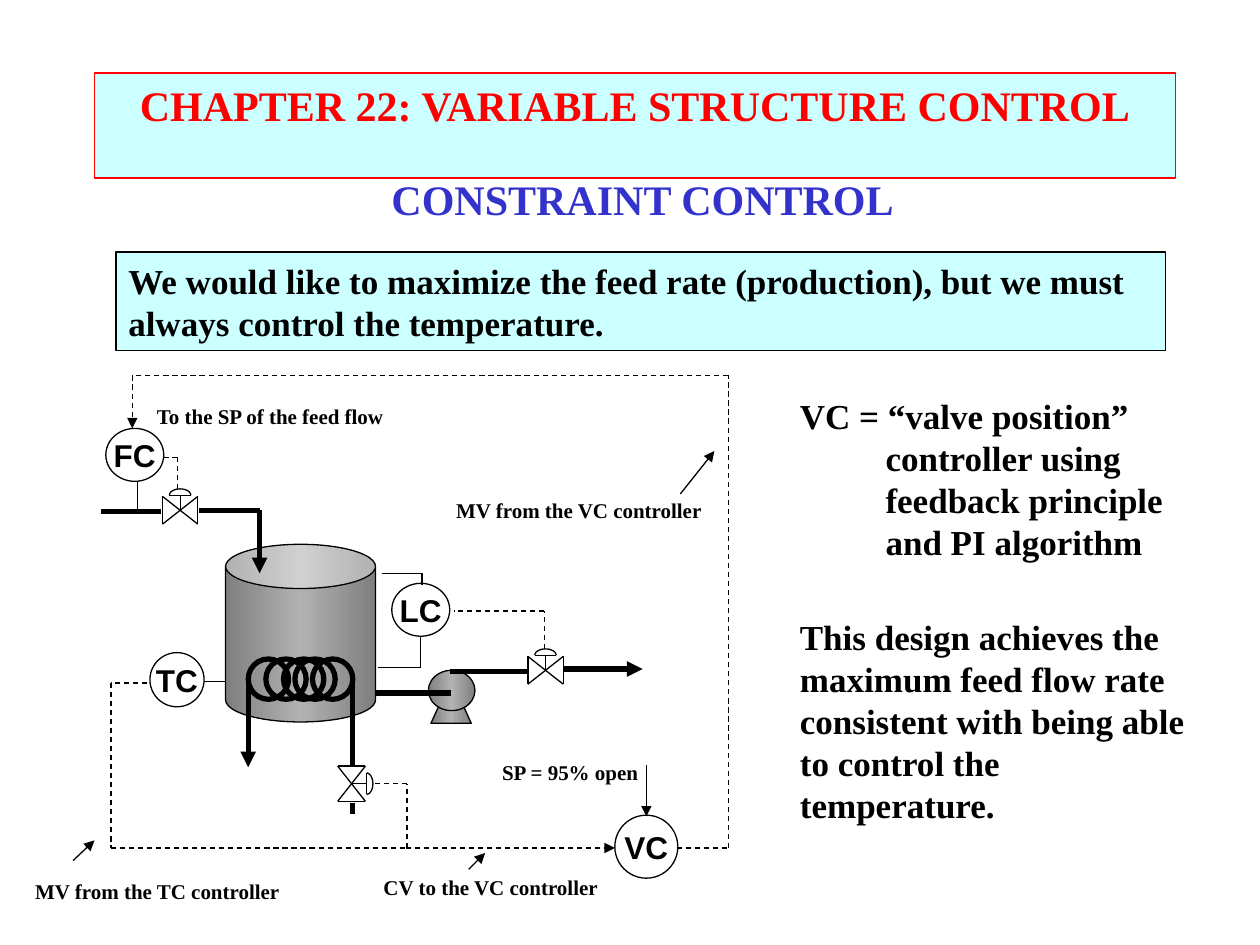
from copy import deepcopy
from itertools import pairwise
from math import cos, pi, sin

from lxml import etree
from pptx import Presentation
from pptx.dml.color import RGBColor
from pptx.enum.dml import MSO_LINE
from pptx.enum.shapes import MSO_CONNECTOR, MSO_SHAPE
from pptx.enum.text import MSO_ANCHOR, MSO_AUTO_SIZE, PP_ALIGN
from pptx.oxml.ns import qn
from pptx.util import Cm, Pt

RECTANGLE, OVAL, CAN = MSO_SHAPE.RECTANGLE, MSO_SHAPE.OVAL, MSO_SHAPE.CAN
RING, PUMP_BASE = MSO_SHAPE.FLOWCHART_CONNECTOR, MSO_SHAPE.FLOWCHART_MANUAL_OPERATION
STRAIGHT, DASH = MSO_CONNECTOR.STRAIGHT, MSO_LINE.DASH
LEFT, CENTER = PP_ALIGN.LEFT, PP_ALIGN.CENTER
TOP, MIDDLE = MSO_ANCHOR.TOP, MSO_ANCHOR.MIDDLE
FIT, FIXED = MSO_AUTO_SIZE.SHAPE_TO_FIT_TEXT, MSO_AUTO_SIZE.NONE

COLORS = {"black": "000000", "red": "FF0000", "blue": "3333CC",
          "panel": "CCFFFF", "steel": "7F7F7F", "shine": "B2B2B2"}
SERIF, SANS = "Times New Roman", "Arial"
THIN, THICK = 0.75, 3

TITLE = "CHAPTER 22: VARIABLE STRUCTURE CONTROL"
SUBTITLE = "CONSTRAINT CONTROL"
GOAL = ("We would like to maximize the feed rate (production), "
        "but we must always control the temperature.")
NOTES = [
    ("VC = “valve position” controller using feedback principle and PI algorithm",
     (6.25, 3.08, 3.17, 1.43), 0.68),
    ("This design achieves the maximum feed flow rate consistent with being able "
     "to control the temperature.", (6.25, 4.83, 3.3, 1.77), 0),
]
LABELS = [
    ("SP = 95% open", (3.88, 5.98, 1.29, 0.3)),
    ("To the SP of the feed flow", (1.13, 3.15, 2.03, 0.3)),
    ("CV to the VC controller", (2.94, 6.89, 1.91, 0.3)),
    ("MV from the VC controller", (3.51, 3.9, 2.17, 0.3)),
    ("MV from the TC controller", (0.17, 6.92, 2.16, 0.3)),
]
CONTROLLERS = [
    ("TC", (1.19, 5.18, 0.43, 0.43)),
    ("LC", (3.11, 4.63, 0.46, 0.42)),
    ("FC", (0.84, 3.4, 0.46, 0.42)),
    ("VC", (4.88, 6.47, 0.5, 0.5)),
]
VESSELS = [
    (CAN, (1.79, 4.32, 1.19, 1.41)),
    (PUMP_BASE, (3.42, 5.6, 0.32, 0.14)),
    (OVAL, (3.4, 5.32, 0.37, 0.32)),
]
COIL_LEFTS = [1.97, 2.11, 2.25, 2.34, 2.48]
VALVES = [(1.43, 4.05, False), (4.33, 5.32, False), (2.79, 6.22, True)]

PIPES = [
    ([(1.28, 4.06), (0.8, 4.06)], False),
    ([(1.58, 4.05), (2.06, 4.05), (2.06, 4.55)], True),
    ([(1.97, 5.41), (1.97, 6.09)], True),
    ([(2.8, 5.41), (2.8, 6.09)], False),
    ([(2.8, 6.37), (2.8, 6.46)], False),
    ([(3.58, 5.5), (2.98, 5.5)], False),
    ([(3.57, 5.33), (4.19, 5.33)], False),
    ([(4.48, 5.31), (5.1, 5.31)], True),
]
SENSORS = [
    ([(1.62, 5.41), (1.79, 5.41)], False),
    ([(3.03, 4.55), (3.35, 4.55), (3.35, 4.64)], False),
    ([(3, 5.3), (3.34, 5.3), (3.34, 5.05)], False),
    ([(1.09, 3.82), (1.09, 4.07)], False),
    ([(5.13, 6.07), (5.13, 6.48)], True),
    ([(3.72, 6.9), (3.85, 6.77)], True),
    ([(5.4, 3.92), (5.67, 3.58)], True),
    ([(0.58, 6.83), (0.75, 6.67)], True),
]
SIGNALS = [
    ([(4.32, 5.15), (4.32, 4.85), (3.6, 4.85)], False),
    ([(1.41, 3.88), (1.41, 3.63), (1.3, 3.63)], False),
    ([(1.17, 5.42), (0.88, 5.42), (0.88, 6.73), (3.22, 6.73), (4.88, 6.73)], True),
    ([(3.23, 6.73), (3.23, 6.22), (2.98, 6.22)], False),
    ([(5.37, 6.73), (5.78, 6.73), (5.78, 2.98), (1.05, 2.98), (1.05, 3.4)], True),
]


def inch(value):
    return Cm(value * 2.54)


def color(name):
    return RGBColor.from_string(COLORS[name])


def place(shape, area):
    shape.left, shape.top, shape.width, shape.height = map(inch, area)


def paint(shape, fill=None, line="black", width=THIN):
    shape.shadow.inherit = False
    if fill:
        shape.fill.solid()
        shape.fill.fore_color.rgb = color(fill)
    else:
        shape.fill.background()
    shape.line.color.rgb = color(line)
    shape.line.width = Pt(width)


def write(shape, text, size, font=SERIF, ink="black", align=LEFT,
          anchor=MIDDLE, wrap=True, fit=FIT, hanging=0):
    frame = shape.text_frame
    frame.word_wrap, frame.auto_size, frame.vertical_anchor = wrap, fit, anchor
    para = frame.paragraphs[0]
    para.alignment = align
    if hanging:
        properties = para._p.get_or_add_pPr()
        properties.set("marL", str(inch(hanging)))
        properties.set("indent", str(-inch(hanging)))
    span = para.add_run()
    span.text = text
    span.font.name, span.font.size, span.font.bold = font, Pt(size), True
    span.font.color.rgb = color(ink)


def add_shape(page, kind, area, **style):
    shape = page.shapes.add_shape(kind, *map(inch, area))
    paint(shape, **style)
    return shape


def add_text(page, text, area, size, **style):
    box = page.shapes.add_textbox(*map(inch, area))
    write(box, text, size, **style)


def add_route(page, points, width=THIN, dash=None, arrow=False):
    for start, end in pairwise(points):
        line = page.shapes.add_connector(STRAIGHT, *map(inch, start + end))
        line.line.color.rgb = color("black")
        line.line.width = Pt(width)
        if dash:
            line.line.dash_style = dash
        if arrow and end == points[-1]:
            etree.SubElement(line.line._get_or_add_ln(), qn("a:tailEnd"), type="triangle")
        etree.SubElement(line._element.spPr, qn("a:effectLst"))


def add_vessel(page, kind, area):
    vessel = add_shape(page, kind, area)
    vessel.fill.gradient()
    vessel.fill.gradient_angle = 0
    stops = vessel._element.spPr.find(".//" + qn("a:gsLst"))
    stops.append(deepcopy(stops[0]))
    bands = [(0, "steel"), (0.5, "shine"), (1, "steel")]
    for stop, (position, shade) in zip(vessel.fill.gradient_stops, bands):
        stop.position = position
        stop.color.rgb = color(shade)
    if kind == CAN:
        vessel.adjustments[0] = 0.295
    if kind == PUMP_BASE:
        vessel.rotation = 180


def add_valve(page, x, y, upright):
    def turn(along, out):
        return (x + out, y + along) if upright else (x + along, y - out)

    half, rise, cap, stem, dome = 0.14, 0.11, 0.085, 0.12, 0.05
    for along in (-half, half):
        add_route(page, [turn(along, -rise), turn(along, rise), turn(-along, -rise)])
    add_route(page, [turn(0, 0), turn(0, stem)])
    add_route(page, [turn(-cap, stem), turn(cap, stem)])
    arc = [turn(cap * cos(pi * step / 12), stem + dome * sin(pi * step / 12))
           for step in range(13)]
    points = [tuple(map(inch, point)) for point in arc]
    outline = page.shapes.build_freeform(*points[0])
    outline.add_line_segments(points[1:], close=False)
    paint(outline.convert_to_shape())


def main():
    deck = Presentation()
    deck.slide_width, deck.slide_height = inch(10), inch(7.5)
    page = deck.slides.add_slide(deck.slide_layouts[5])
    title = page.shapes.title
    place(title, (0.75, 0.58, 8.58, 0.51))
    title.fill.solid()
    title.fill.fore_color.rgb = color("panel")
    title.line.color.rgb = color("red")
    title.line.width = Pt(THIN)
    write(title, TITLE, 24, ink="red", align=CENTER, anchor=TOP)

    goal = add_shape(page, RECTANGLE, (0.92, 2, 8.33, 0.78), fill="panel")
    write(goal, GOAL, 20)
    add_text(page, SUBTITLE, (3, 1.33, 4.2, 0.5), 24, ink="blue", align=CENTER, wrap=False)
    for text, area, hanging in NOTES:
        add_text(page, text, area, 20, hanging=hanging)

    for kind, area in VESSELS:
        add_vessel(page, kind, area)
    for left in COIL_LEFTS:
        add_shape(page, RING, (left, 5.23, 0.32, 0.32), width=THICK)
    for routes, width, dash in ((PIPES, THICK, None), (SENSORS, THIN, None),
                                (SIGNALS, THIN, DASH)):
        for points, arrow in routes:
            add_route(page, points, width, dash, arrow)
    for valve in VALVES:
        add_valve(page, *valve)
    for text, area in CONTROLLERS:
        circle = add_shape(page, OVAL, area)
        write(circle, text, 18, font=SANS, align=CENTER, wrap=False, fit=FIXED)
    for text, area in LABELS:
        add_text(page, text, area, 12, align=CENTER, wrap=False)
    deck.save("out.pptx")


if __name__ == "__main__":
    main()
